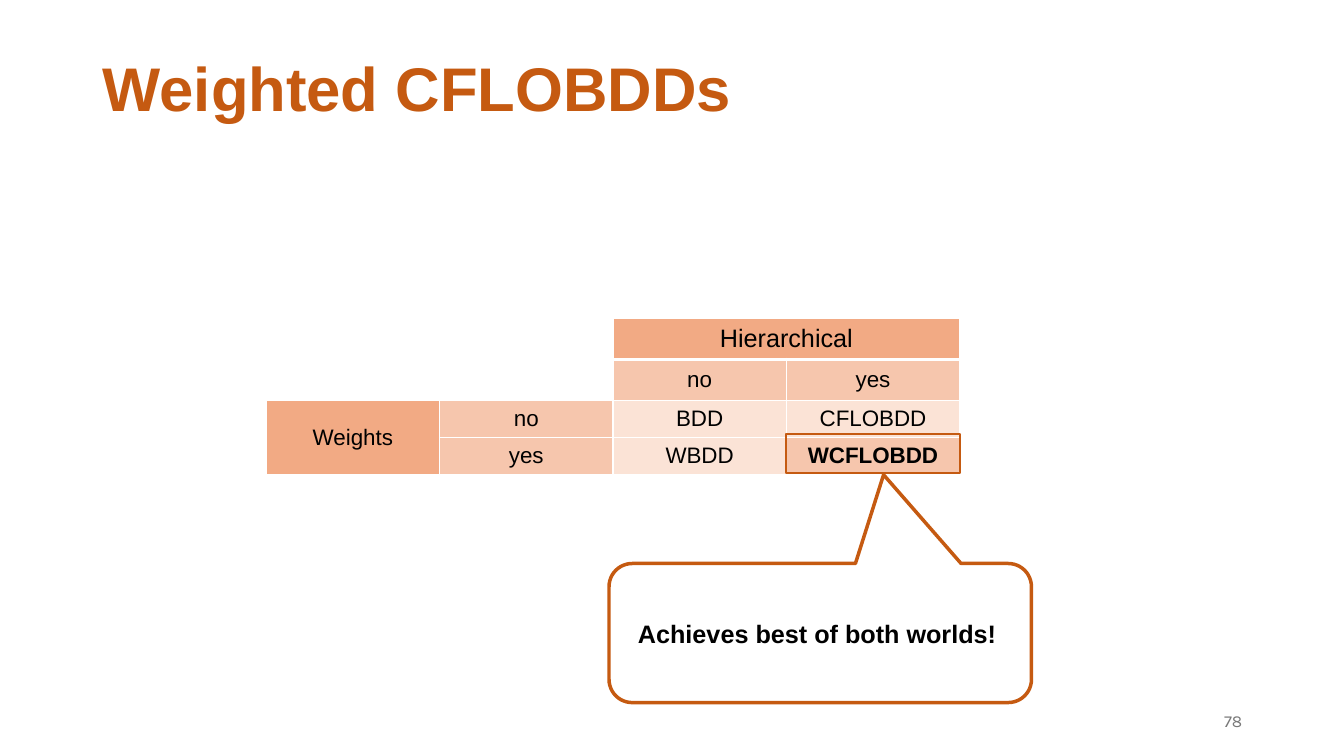
from pptx import Presentation
from pptx.dml.color import RGBColor
from pptx.enum.shapes import MSO_SHAPE
from pptx.enum.text import MSO_ANCHOR, PP_ALIGN
from pptx.oxml.ns import qn
from pptx.util import Inches, Pt
from lxml import etree

LEFT, CENTER, RIGHT = PP_ALIGN.LEFT, PP_ALIGN.CENTER, PP_ALIGN.RIGHT
MIDDLE = MSO_ANCHOR.MIDDLE
RECTANGLE = MSO_SHAPE.RECTANGLE
CALLOUT = MSO_SHAPE.ROUNDED_RECTANGULAR_CALLOUT

COLORS = {
    "accent": "C55A11", "header": "F2AA84", "subheader": "F6C6AD",
    "body": "FBE3D6", "border": "FFFFFF", "text": "000000", "number": "797979",
}

# Table grid, in inches
TABLE_LEFT, TABLE_TOP = 2.64, 3.16
COLUMN_WIDTH = 1.72
ROW_HEIGHTS = [0.39, 0.39, 0.37, 0.37]


def write(frame, text, size=16, color="text", bold=False, font="Arial",
          align=CENTER, spacing=None):
    frame.word_wrap = True
    para = frame.paragraphs[0]
    para.alignment = align
    para.line_spacing = spacing
    span = para.add_run()
    span.text = text
    span.font.name = font
    span.font.size = Pt(size)
    span.font.bold = bold
    span.font.color.rgb = RGBColor.from_string(COLORS[color])


deck = Presentation()
deck.slide_width, deck.slide_height = Inches(13.33), Inches(7.5)
page = deck.slides.add_slide(deck.slide_layouts[6])

# Comparison table: text and fill of each cell
cells = [
    [("", None), ("", None), ("Hierarchical", "header"), ("", "header")],
    [("", None), ("", None), ("no", "subheader"), ("yes", "subheader")],
    [("Weights", "header"), ("no", "subheader"), ("BDD", "body"), ("CFLOBDD", "body")],
    [("", "header"), ("yes", "subheader"), ("WBDD", "body"), ("WCFLOBDD", "subheader")],
]
table = page.shapes.add_table(
    4, 4, Inches(TABLE_LEFT), Inches(TABLE_TOP),
    Inches(4 * COLUMN_WIDTH), Inches(sum(ROW_HEIGHTS))).table
table.first_row = table.horz_banding = False
for column in table.columns:
    column.width = Inches(COLUMN_WIDTH)

for row, entries in enumerate(cells):
    table.rows[row].height = Inches(ROW_HEIGHTS[row])
    for column, (text, fill) in enumerate(entries):
        cell = table.cell(row, column)
        cell.vertical_anchor = MIDDLE
        properties = cell._tc.get_or_add_tcPr()
        for side in "LRTB":
            heavy = (row, side) in [(0, "B"), (1, "T")]
            line = etree.SubElement(properties, qn(f"a:ln{side}"), w=str(Pt(3 if heavy else 1)))
            paint = etree.SubElement(line, qn("a:solidFill"))
            etree.SubElement(paint, qn("a:srgbClr"), val=COLORS["border"])
        if fill:
            cell.fill.solid()
            cell.fill.fore_color.rgb = RGBColor.from_string(COLORS[fill])
        else:
            cell.fill.background()
        if text:
            write(cell.text_frame, text, size=18 if row == 0 else 16, bold=text == "WCFLOBDD")

for first, last in [((0, 0), (0, 1)), ((0, 2), (0, 3)), ((2, 0), (3, 0))]:
    table.cell(*first).merge(table.cell(*last))

# Highlight around the last cell, and the callout pointing at it
highlight_left = TABLE_LEFT + 3 * COLUMN_WIDTH
highlight_top = TABLE_TOP + sum(ROW_HEIGHTS[:3])
outlines = [
    (RECTANGLE, highlight_left, highlight_top, COLUMN_WIDTH, 0.38, 1.5, []),
    (CALLOUT, 6.04, 5.59, 4.19, 1.38, 2.5, [0.15, -1.138, 0.167]),
]
for kind, left, top, width, height, weight, adjustments in outlines:
    outline = page.shapes.add_shape(
        kind, Inches(left), Inches(top), Inches(width), Inches(height))
    outline.shadow.inherit = False
    outline.fill.background()
    outline.line.color.rgb = RGBColor.from_string(COLORS["accent"])
    outline.line.width = Pt(weight)
    for index, value in enumerate(adjustments):
        outline.adjustments[index] = value

# Callout message, title and page number
texts = [
    ("Achieves best of both worlds!", (6.12, 6.08, 3.97, 0.4), dict(size=18, bold=True)),
    ("Weighted CFLOBDDs", (0.92, 0.4, 11.5, 1.01),
     dict(size=44, bold=True, color="accent", align=LEFT, spacing=0.9)),
    ("78", (9.42, 6.95, 3, 0.4),
     dict(size=12, color="number", font="Karla", align=RIGHT)),
]
for text, place, style in texts:
    box = page.shapes.add_textbox(*map(Inches, place))
    box.text_frame.vertical_anchor = MIDDLE
    write(box.text_frame, text, **style)

deck.save("out.pptx")
